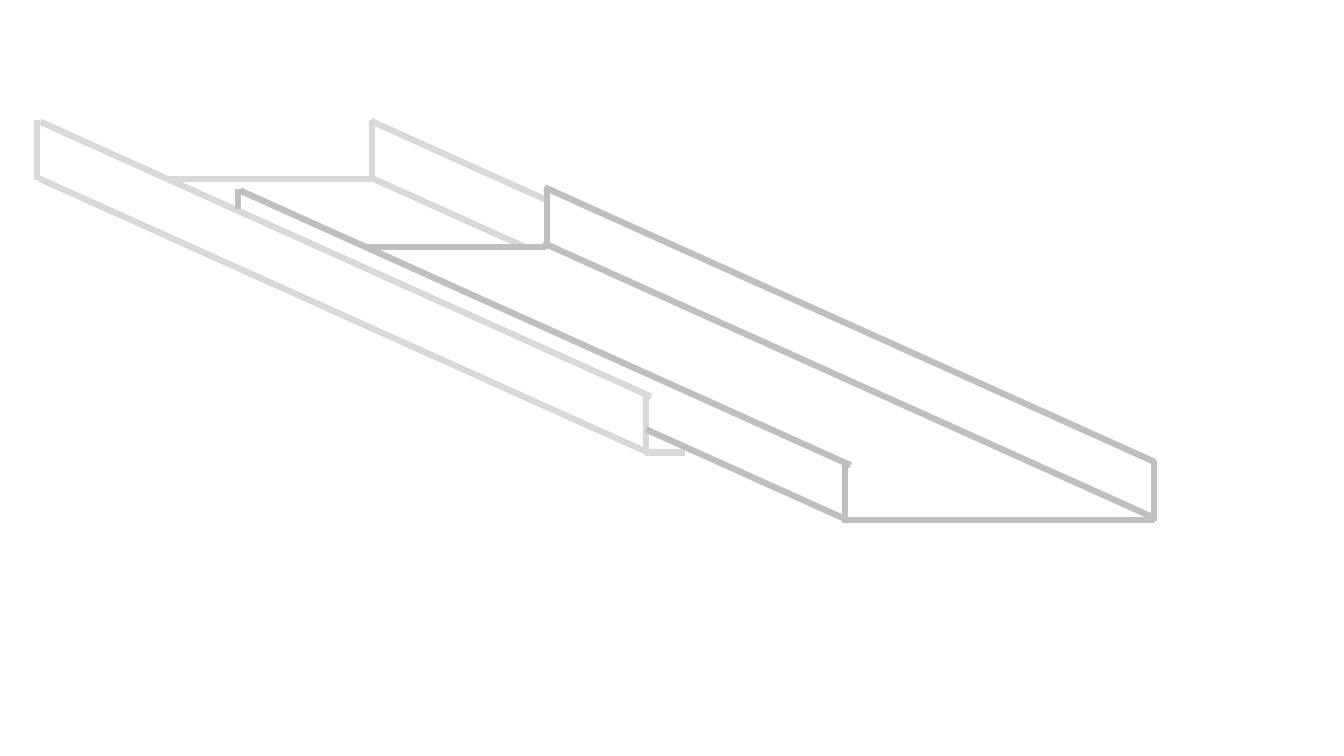
from dataclasses import dataclass

from lxml.etree import SubElement
from pptx import Presentation
from pptx.dml.color import RGBColor
from pptx.enum.shapes import MSO_CONNECTOR as Connector
from pptx.oxml.ns import qn
from pptx.util import Cm, Pt


@dataclass(frozen=True)
class Theme:
    rear: RGBColor = RGBColor(0xD9, 0xD9, 0xD9)
    front: RGBColor = RGBColor(0xBF, 0xBF, 0xBF)
    stroke: float = 4.5


THEME = Theme()
SLOPE = 0.45
RAIL_RUN = 15.39
POST_HEIGHT = 1.52


def draw_edge(shapes, color, x, y, run, drop):
    edge = shapes.add_connector(
        Connector.STRAIGHT, Cm(x), Cm(y), Cm(x + run), Cm(y + drop)
    )
    edge.line.color.rgb = color
    edge.line.width = Pt(THEME.stroke)
    SubElement(edge._element.spPr, qn("a:effectLst"))


def draw_rail(shapes, color, x, y, run=RAIL_RUN):
    draw_edge(shapes, color, x, y, run, run * SLOPE)


def draw_post(shapes, color, x, y, height=POST_HEIGHT):
    draw_edge(shapes, color, x, y, 0, height)


def draw_sill(shapes, color, x, y, width):
    draw_edge(shapes, color, x, y, width, 0)


def draw_rear_channel(shapes):
    color = THEME.rear
    for x in (0.94, 9.37):
        draw_post(shapes, color, x, 3.02)
    draw_sill(shapes, color, 4.19, 4.52, 5.18)
    draw_rail(shapes, color, 0.99, 4.5)
    draw_rail(shapes, color, 1.02, 3.07)
    draw_rail(shapes, color, 9.4, 4.5, 3.88)
    draw_rail(shapes, color, 9.35, 3.05, 4.44)
    draw_post(shapes, color, 16.28, 9.91)
    draw_sill(shapes, color, 16.26, 11.4, 1.01)


def draw_front_channel(shapes):
    color = THEME.front
    draw_sill(shapes, color, 9.19, 6.22, 4.58)
    draw_rail(shapes, color, 16.28, 10.82, 5.11)
    for x, y in ((6.05, 4.8), (13.69, 6.12), (13.72, 4.72)):
        draw_rail(shapes, color, x, y)

    opening = shapes.add_group_shape().shapes
    for x in (21.29, 29.08):
        draw_post(opening, color, x, 11.62)
    draw_sill(opening, color, 21.21, 13.11, 7.9)

    draw_post(shapes, color, 5.99, 4.75, 0.51)
    draw_post(shapes, color, 13.79, 4.72, 1.55)


def main():
    deck = Presentation()
    deck.slide_width = Cm(33.87)
    deck.slide_height = Cm(19.05)
    slide = deck.slides.add_slide(deck.slide_layouts[6])
    draw_rear_channel(slide.shapes)
    draw_front_channel(slide.shapes)
    deck.save("out.pptx")


if __name__ == "__main__":
    main()
